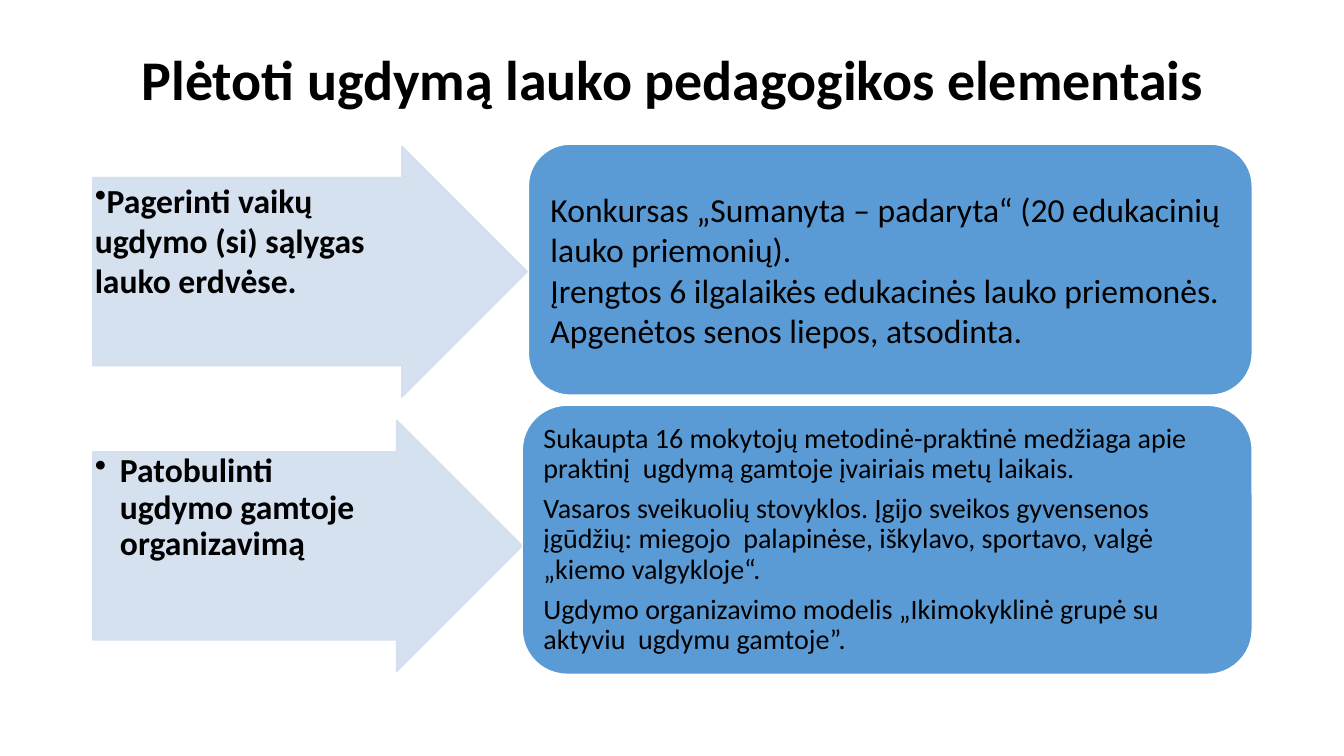
from dataclasses import dataclass

from lxml import etree
from pptx import Presentation
from pptx import util as u
from pptx.dml.color import RGBColor
from pptx.enum import shapes, text
from pptx.oxml.ns import qn
from pptx.shapes.autoshape import Shape
from pptx.slide import Slide
from pptx.text.text import TextFrame

PX = 9144
FONT = "Calibri"
BLACK = RGBColor(0x00, 0x00, 0x00)
WHITE = RGBColor(0xFF, 0xFF, 0xFF)
BLUE = RGBColor(0x5B, 0x9B, 0xD5)
PALE_BLUE = RGBColor(0xD2, 0xDE, 0xEF)


@dataclass(frozen=True)
class Goal:
    left: int
    top: int
    width: int
    height: int
    words: str
    indent: int
    spacing: float
    after: float


@dataclass(frozen=True)
class Result:
    left: int
    top: int
    width: int
    height: int
    lines: tuple[str, ...]
    size: int
    margins: tuple[int, int, int, int]
    spacing: float
    after: float


GOALS = (
    Goal(92, 145, 431, 249, "Pagerinti vaikų ugdymo (si) sąlygas lauko erdvėse.", 0, 1.0, 0),
    Goal(92, 417, 426, 249, "Patobulinti ugdymo gamtoje organizavimą", 25, 0.9, 3.6),
)
RESULTS = (
    Result(
        524, 143, 718, 249,
        (
            "Konkursas „Sumanyta – padaryta“ (20 edukacinių lauko priemonių).",
            "Įrengtos 6 ilgalaikės edukacinės lauko priemonės.",
            "Apgenėtos senos liepos, atsodinta.",
        ),
        24, (10, 5, 10, 5), 1.0, 0,
    ),
    Result(
        518, 402, 724, 267,
        (
            "Sukaupta 16 mokytojų metodinė-praktinė medžiaga apie praktinį  ugdymą "
            "gamtoje įvairiais metų laikais.",
            "Vasaros sveikuolių stovyklos. Įgijo sveikos gyvensenos įgūdžių: miegojo  "
            "palapinėse, iškylavo, sportavo, valgė „kiemo valgykloje“.",
            "Ugdymo organizavimo modelis „Ikimokyklinė grupė su aktyviu  ugdymu gamtoje”.",
        ),
        20, (8, 4, 8, 4), 0.9, 7,
    ),
)


def px(length: int) -> u.Emu:
    return u.Emu(length * PX)


def write(
    frame: TextFrame,
    lines: tuple[str, ...],
    *,
    size: int,
    bold: bool = False,
    align: text.PP_ALIGN = text.PP_ALIGN.LEFT,
    anchor: text.MSO_ANCHOR = text.MSO_ANCHOR.TOP,
    margins: tuple[int, int, int, int] = (10, 5, 10, 5),
    spacing: float = 1.0,
    after: float = 0,
) -> None:
    frame.word_wrap = True
    frame.auto_size = text.MSO_AUTO_SIZE.NONE
    frame.vertical_anchor = anchor
    frame.margin_left, frame.margin_top, frame.margin_right, frame.margin_bottom = map(px, margins)
    for index, line in enumerate(lines):
        para = frame.add_paragraph() if index else frame.paragraphs[0]
        para.alignment = align
        para.line_spacing = spacing
        para.space_before = u.Pt(0)
        para.space_after = u.Pt(after)
        span = para.add_run()
        span.text = line
        span.font.name = FONT
        span.font.size = u.Pt(size)
        span.font.bold = bold
        span.font.color.rgb = BLACK


def add_box(
    page: Slide, kind: shapes.MSO_SHAPE, item: Goal | Result, fill: RGBColor, line: RGBColor
) -> Shape:
    box = page.shapes.add_shape(kind, px(item.left), px(item.top), px(item.width), px(item.height))
    box.shadow.inherit = False
    box.fill.solid()
    box.fill.fore_color.rgb = fill
    box.line.color.rgb = line
    box.line.width = u.Pt(1)
    return box


def add_goal(page: Slide, goal: Goal) -> None:
    arrow = add_box(page, shapes.MSO_SHAPE.RIGHT_ARROW, goal, PALE_BLUE, PALE_BLUE)
    arrow.adjustments[0] = 0.75
    arrow.adjustments[1] = 0.5
    for color in arrow.element.spPr.iter(qn("a:srgbClr")):
        etree.SubElement(color, qn("a:alpha"), val="90000")
    write(
        arrow.text_frame, (goal.words,), size=24, bold=True,
        margins=(2, 2, 60, 2), spacing=goal.spacing, after=goal.after,
    )
    properties = arrow.text_frame.paragraphs[0]._p.get_or_add_pPr()
    properties.set("marL", str(px(goal.indent)))
    properties.set("indent", str(px(-goal.indent)))
    etree.SubElement(properties, qn("a:buChar"), char="•")


def add_result(page: Slide, result: Result) -> None:
    box = add_box(page, shapes.MSO_SHAPE.ROUNDED_RECTANGLE, result, BLUE, WHITE)
    write(
        box.text_frame, result.lines, size=result.size, anchor=text.MSO_ANCHOR.MIDDLE,
        margins=result.margins, spacing=result.spacing, after=result.after,
    )


def main() -> None:
    deck = Presentation()
    deck.slide_width, deck.slide_height = u.Inches(13.33), u.Inches(7.5)
    page = deck.slides.add_slide(deck.slide_layouts[5])
    title = page.shapes.title
    title.left, title.top, title.width, title.height = map(px, (92, 40, 1150, 145))
    write(
        title.text_frame, ("Plėtoti ugdymą lauko pedagogikos elementais",), size=40, bold=True,
        align=text.PP_ALIGN.CENTER, margins=(10, 12, 10, 5), spacing=0.9,
    )
    for goal, result in zip(GOALS, RESULTS):
        add_goal(page, goal)
        add_result(page, result)
    deck.save("out.pptx")


if __name__ == "__main__":
    main()
